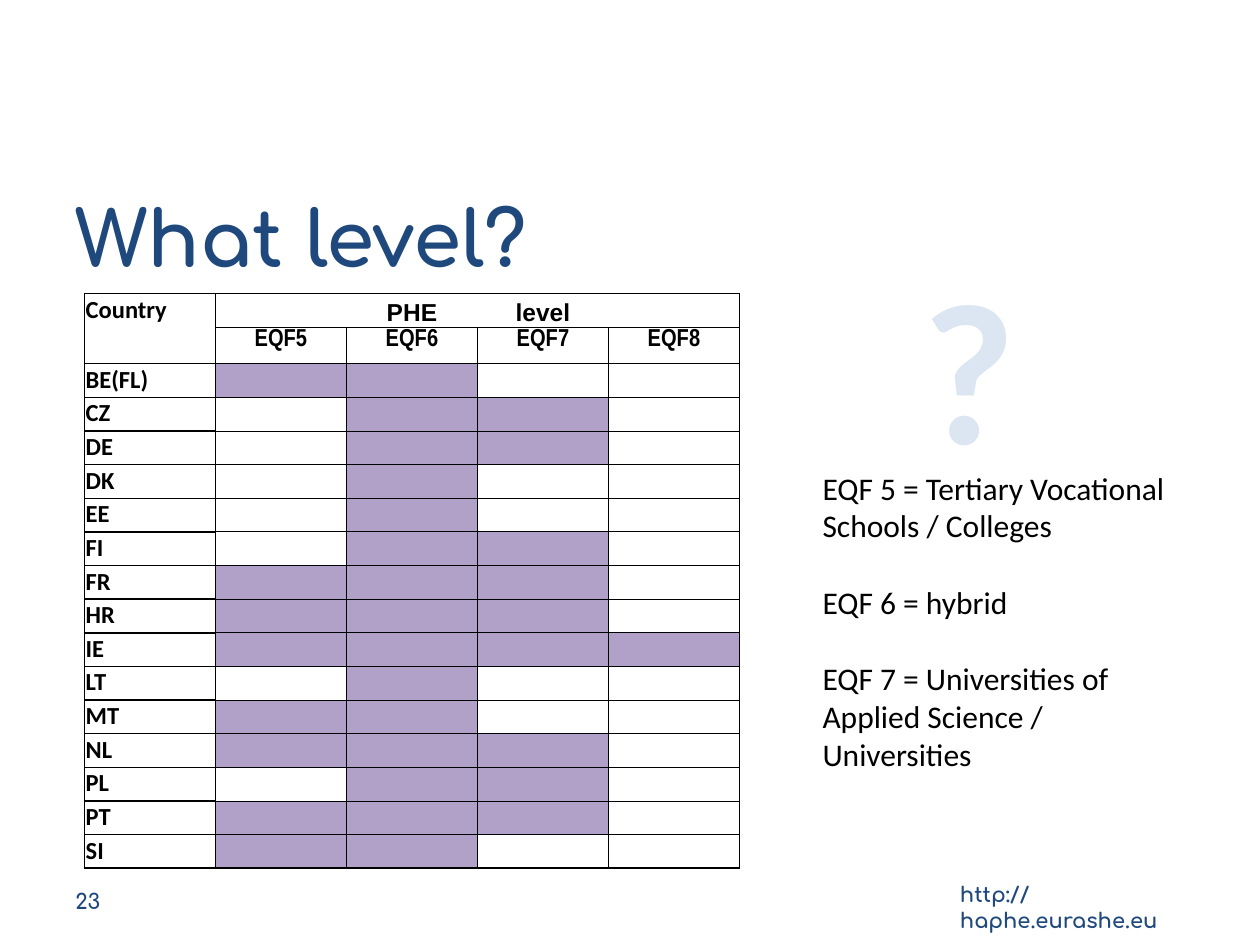
import pptx
import pptx.util
import pptx.dml.color
import pptx.enum.text
from lxml import etree
from pptx.oxml.ns import qn
from pptx.util import Inches

COLORS = {"navy": "1F497D", "black": "000000", "violet": "B1A0C7", "pale": "DCE6F2"}
ALIGN = pptx.enum.text.PP_ALIGN
ANCHOR = pptx.enum.text.MSO_ANCHOR

LEVELS = ["EQF5", "EQF6", "EQF7", "EQF8"]
COUNTRY_LEVELS = {
    "BE(FL)": "56", "CZ": "67", "DE": "67", "DK": "6", "EE": "6",
    "FI": "67", "FR": "567", "HR": "567", "IE": "5678", "LT": "6",
    "MT": "56", "NL": "567", "PL": "67", "PT": "567", "SI": "56",
}
EXPLANATIONS = [
    "EQF 5 = Tertiary Vocational Schools / Colleges",
    "EQF 6 = hybrid",
    "EQF 7 = Universities of Applied Science / Universities",
]


def write_text(frame, *lines, size=14, font="Calibri", color="black", bold=False,
               align=ALIGN.LEFT, gap=0):
    """Fill a text frame with one paragraph per line, gap points apart."""
    for index, line in enumerate(lines):
        paragraph = frame.add_paragraph() if index else frame.paragraphs[0]
        paragraph.alignment = align
        if index:
            paragraph.space_before = pptx.util.Pt(gap)
        run = paragraph.add_run()
        run.text = line
        run.font.size = pptx.util.Pt(size)
        run.font.name = font
        run.font.bold = bold
        run.font.color.rgb = pptx.dml.color.RGBColor.from_string(COLORS[color])


def add_text_box(slide, left, top, width, height, *lines, anchor=ANCHOR.TOP, **text_format):
    box = slide.shapes.add_textbox(Inches(left), Inches(top), Inches(width), Inches(height))
    box.text_frame.word_wrap = True
    box.text_frame.vertical_anchor = anchor
    write_text(box.text_frame, *lines, **text_format)


def set_borders(cell, **widths):
    """Draw the left, right, top and bottom lines; width 0 hides a line."""
    properties = cell._tc.get_or_add_tcPr()
    for index, side in enumerate(("left", "right", "top", "bottom")):
        width = widths[side]
        line = etree.Element(qn("a:ln" + side[0].upper()), w=str(pptx.util.Pt(width)))
        if width:
            fill = etree.SubElement(line, qn("a:solidFill"))
            etree.SubElement(fill, qn("a:srgbClr"), val=COLORS["black"])
        else:
            etree.SubElement(line, qn("a:noFill"))
        properties.insert(index, line)


def format_cell(cell, text, shaded=False, anchor=ANCHOR.TOP, **text_format):
    cell.margin_left = cell.margin_right = cell.margin_top = Inches(0.01)
    cell.margin_bottom = 0
    cell.vertical_anchor = anchor
    if shaded:
        cell.fill.solid()
        cell.fill.fore_color.rgb = pptx.dml.color.RGBColor.from_string(COLORS["violet"])
    else:
        cell.fill.background()
    if text:
        write_text(cell.text_frame, text, bold=True, **text_format)
    else:
        # A small end mark keeps an empty cell from stretching its row.
        etree.SubElement(cell.text_frame.paragraphs[0]._p, qn("a:endParaRPr"), sz="1200")


def border_widths(row, column, last_row, last_column):
    """Thick frame and country column, thin grid, open header cells."""
    def horizontal(edge):
        if edge in (0, last_row + 1):
            return 1
        if column == 0:
            return 0 if edge == 1 else 0.5 if edge == 2 else 1
        return 0.5

    def vertical(edge):
        if edge in (0, 1, last_column + 1):
            return 1
        return 0 if row == 0 else 0.5

    return {"left": vertical(column), "right": vertical(column + 1),
            "top": horizontal(row), "bottom": horizontal(row + 1)}


def add_level_table(slide):
    row_count, column_count = len(COUNTRY_LEVELS) + 2, len(LEVELS) + 1
    frame = slide.shapes.add_table(row_count, column_count, Inches(0.67), Inches(2.33),
                                   Inches(5.2), Inches(4.57))
    table = frame.table
    table.first_row = table.horz_banding = False
    for column in table.columns:
        column.width = Inches(1.04)
    for index, row in enumerate(table.rows):
        row.height = Inches(0.29 if index == 1 else 0.267)

    for column, heading in enumerate(["Country", "", "PHE", "level", ""]):
        is_country = column == 0
        format_cell(table.cell(0, column), heading,
                    font="Calibri" if is_country else "Arial",
                    align=ALIGN.LEFT if is_country else ALIGN.CENTER,
                    anchor=ANCHOR.TOP if is_country else ANCHOR.BOTTOM)
    for column, level in enumerate([""] + LEVELS):
        format_cell(table.cell(1, column), level, font="Arial Narrow", align=ALIGN.CENTER)
    for row, (country, offered) in enumerate(COUNTRY_LEVELS.items(), start=2):
        format_cell(table.cell(row, 0), country)
        for column, level in enumerate(LEVELS, start=1):
            format_cell(table.cell(row, column), "", shaded=level[-1] in offered)

    for row in range(row_count):
        for column in range(column_count):
            set_borders(table.cell(row, column),
                        **border_widths(row, column, row_count - 1, column_count - 1))


def main():
    deck = pptx.Presentation()
    deck.slide_width, deck.slide_height = Inches(10), Inches(7.5)
    slide = deck.slides.add_slide(deck.slide_layouts[6])

    brand_text = {"font": "Comfortaa", "color": "navy", "bold": True}
    add_text_box(slide, 7.52, 6.95, 2.15, 0.3, "http://haphe.eurashe.eu", size=12, **brand_text)
    add_text_box(slide, 0.5, 7, 1.58, 0.3, "23", size=12, **brand_text)
    add_text_box(slide, 0.5, 1.25, 9, 1.25, "What level?", size=44,
                 anchor=ANCHOR.MIDDLE, **brand_text)
    add_level_table(slide)
    add_text_box(slide, 6.43, 3.67, 3.07, 2.52, *EXPLANATIONS, size=18, gap=22)
    add_text_box(slide, 7.05, 1.88, 1.29, 2.04, "?", size=115, color="pale",
                 bold=True, align=ALIGN.CENTER)
    deck.save("out.pptx")


if __name__ == "__main__":
    main()
